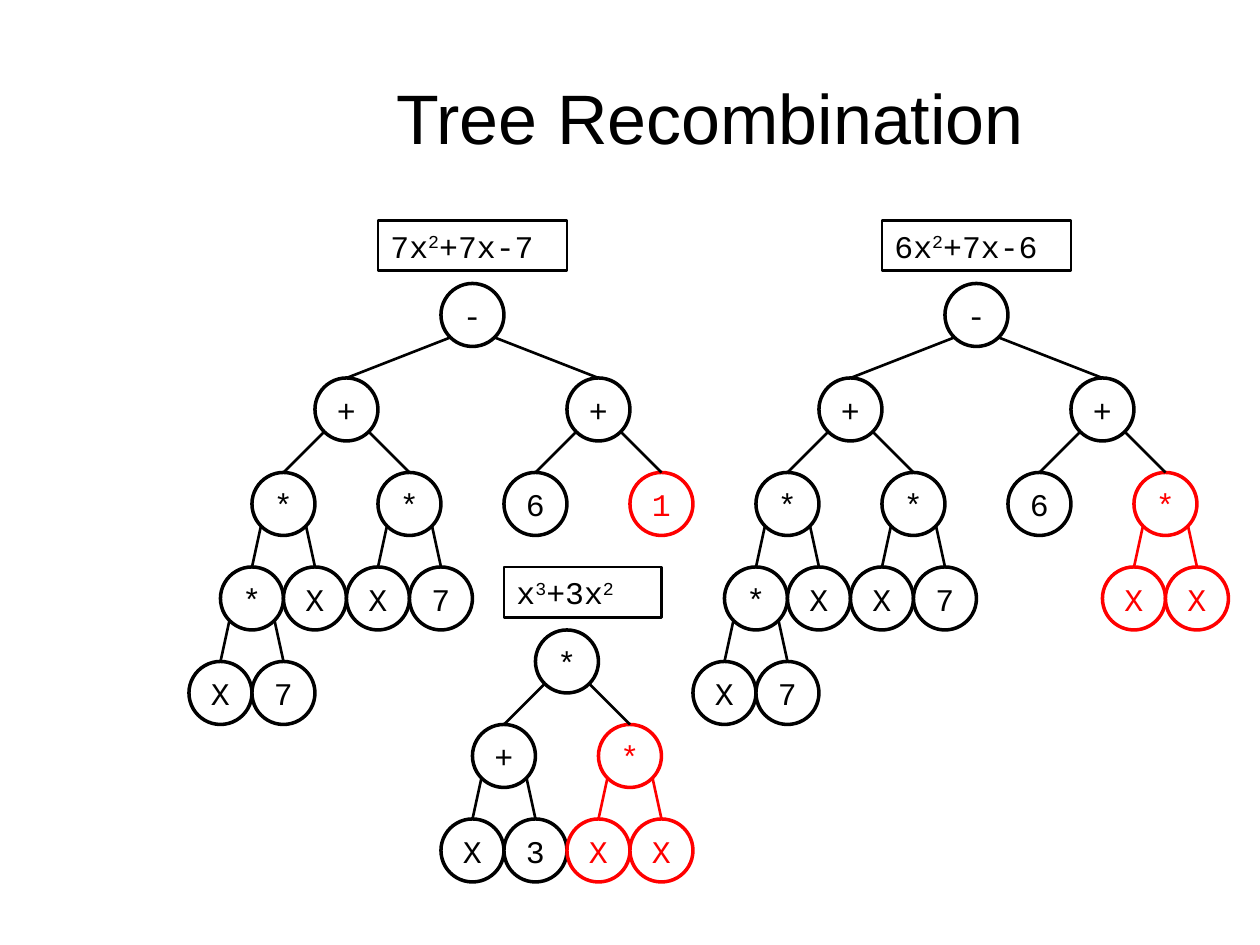
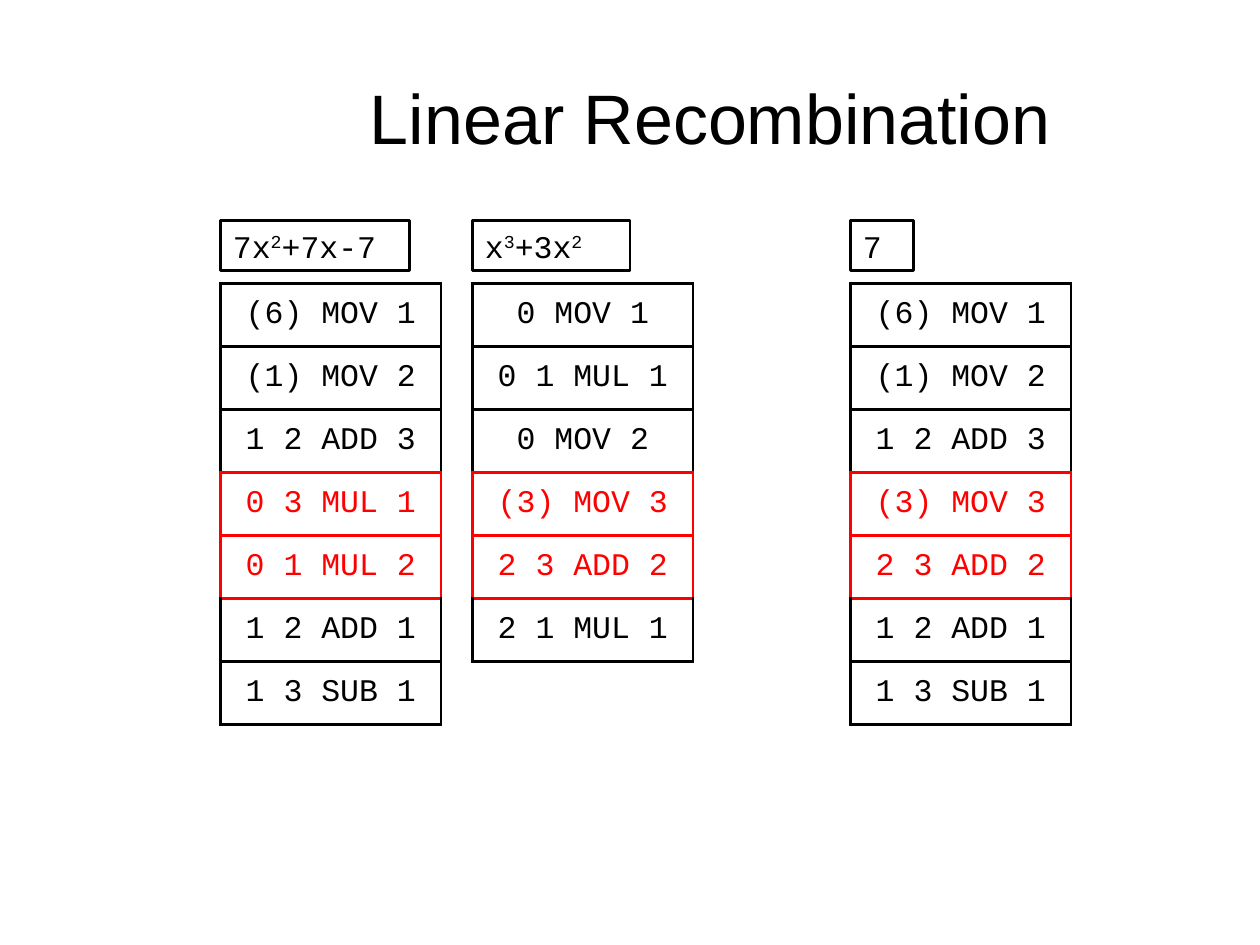
"""Build two slides on recombination of expression trees and linear programs."""
from lxml import etree
from pptx import Presentation
from pptx.dml.color import RGBColor
from pptx.enum.shapes import MSO_CONNECTOR, MSO_SHAPE
from pptx.enum.text import MSO_ANCHOR, MSO_AUTO_SIZE, PP_ALIGN
from pptx.oxml.ns import qn
from pptx.util import Pt

PX = 9144
CENTER = PP_ALIGN.CENTER
MIDDLE = MSO_ANCHOR.MIDDLE
STRAIGHT = MSO_CONNECTOR.STRAIGHT
OVAL = MSO_SHAPE.OVAL
GROW = MSO_AUTO_SIZE.SHAPE_TO_FIT_TEXT
COLOURS = {name: RGBColor.from_string(value) for name, value in
           {"ink": "000000", "swap": "FF0000", "paper": "FFFFFF"}.items()}
TITLE_FONT, CODE_FONT = "Arial", "Courier New"
LABEL_TOP, LABEL_HEIGHT = 175, 40
NODE, LEVEL_STEP, EDGE_OFFSET = 50, 75, 18
COLUMN_WIDTH, ROW_HEIGHT, TABLE_TOP = 175, 50, 225

SEVEN = ["7x", "2", "+7x-7"]
SIX = ["6x", "2", "+7x-6"]
CUBIC = ["x", "3", "+3x", "2"]


def format_runs(paragraph, colour="ink", font=CODE_FONT, size=18):
    for run in paragraph.runs:
        run.font.name = font
        run.font.size = Pt(size)
        run.font.color.rgb = COLOURS[colour]


def add_label(slide, parts, left, top, width):
    """Add a framed formula in which every second part is an exponent."""
    label = slide.shapes.add_textbox(left * PX, top * PX, width * PX, LABEL_HEIGHT * PX)
    label.line.color.rgb = COLOURS["ink"]
    label.line.width = Pt(1.5)
    label.text_frame.word_wrap = True
    label.text_frame.auto_size = GROW
    paragraph = label.text_frame.paragraphs[0]
    for index, part in enumerate(parts):
        run = paragraph.add_run()
        run.text = part
        if index % 2:
            run.font._element.set("baseline", "30000")
    format_runs(paragraph)


presentation = Presentation()
presentation.slide_width, presentation.slide_height = 1000 * PX, 750 * PX
slides = []
for heading in ("Tree Recombination", "Linear Recombination"):
    slide = presentation.slides.add_slide(presentation.slide_layouts[5])
    title = slide.shapes.title
    title.left, title.top, title.width, title.height = 177 * PX, 30 * PX, 773 * PX, 125 * PX
    title.text_frame.text = heading
    title.text_frame.vertical_anchor = MIDDLE
    title.text_frame.paragraphs[0].alignment = CENTER
    format_runs(title.text_frame.paragraphs[0], font=TITLE_FONT, size=40)
    slides.append(slide)
tree_slide, linear_slide = slides

# Each node: symbol, offset from the root, level, index of its parent, colour.
quadratic = [
    ("-", 0, 0, None, "ink"),
    ("+", -100, 1, 0, "ink"), ("+", 100, 1, 0, "ink"),
    ("*", -150, 2, 1, "ink"), ("*", -50, 2, 1, "ink"), ("6", 50, 2, 2, "ink"),
    ("*", -175, 3, 3, "ink"), ("X", -125, 3, 3, "ink"),
    ("X", -75, 3, 4, "ink"), ("7", -25, 3, 4, "ink"),
    ("X", -200, 4, 6, "ink"), ("7", -150, 4, 6, "ink"),
]
replaced_leaf = [("1", 150, 2, 2, "swap")]
inserted_subtree = [("*", 150, 2, 2, "swap"),
                    ("X", 125, 3, 12, "swap"), ("X", 175, 3, 12, "swap")]
cubic = [
    ("*", 0, 0, None, "ink"),
    ("+", -50, 1, 0, "ink"), ("*", 50, 1, 0, "swap"),
    ("X", -75, 2, 1, "ink"), ("3", -25, 2, 1, "ink"),
    ("X", 25, 2, 2, "swap"), ("X", 75, 2, 2, "swap"),
]
trees = [
    (375, 225, quadratic + replaced_leaf, SEVEN, 300, 175, 150),
    (775, 225, quadratic + inserted_subtree, SIX, 700, 175, 150),
    (450, 500, cubic, CUBIC, 400, 450, 125),
]
for root_x, root_top, nodes, formula, label_left, label_top, label_width in trees:
    add_label(tree_slide, formula, label_left, label_top, label_width)
    for symbol, offset, level, parent, colour in nodes:
        center_x, top = root_x + offset, root_top + level * LEVEL_STEP
        node = tree_slide.shapes.add_shape(
            OVAL, (center_x - NODE // 2) * PX, top * PX, NODE * PX, NODE * PX)
        node.shadow.inherit = False
        node.fill.solid()
        node.fill.fore_color.rgb = COLOURS["paper"]
        node.line.color.rgb = COLOURS[colour]
        node.line.width = Pt(2)
        frame = node.text_frame
        frame.text = symbol
        frame.word_wrap = False
        frame.vertical_anchor = MIDDLE
        frame.paragraphs[0].alignment = CENTER
        format_runs(frame.paragraphs[0], colour)
        if parent is None:
            continue
        parent_offset, parent_level, parent_colour = (nodes[parent][i] for i in (1, 2, 4))
        side = EDGE_OFFSET if offset > parent_offset else -EDGE_OFFSET
        start_x = root_x + parent_offset + side
        start_y = root_top + parent_level * LEVEL_STEP + NODE // 2 + EDGE_OFFSET
        edge = tree_slide.shapes.add_connector(
            STRAIGHT, start_x * PX, start_y * PX, center_x * PX, top * PX)
        edge.end_connect(node, 0)
        edge.line.color.rgb = COLOURS[parent_colour]
        edge.line.width = Pt(1.5)
        etree.SubElement(edge._element.spPr, qn("a:effectLst"))

head = ["(6) MOV 1", "(1) MOV 2", "1 2 ADD 3"]
tail = ["1 2 ADD 1", "1 3 SUB 1"]
exchanged = ["(3) MOV 3", "2 3 ADD 2"]
swapped_rows = (3, 4)
programs = [
    (175, 150, SEVEN, head + ["0 3 MUL 1", "0 1 MUL 2"] + tail),
    (375, 125, CUBIC, ["0 MOV 1", "0 1 MUL 1", "0 MOV 2"] + exchanged + ["2 1 MUL 1"]),
    (675, 50, ["7"], head + exchanged + tail),
]
for left, label_width, formula, instructions in programs:
    add_label(linear_slide, formula, left, LABEL_TOP, label_width)
    table = linear_slide.shapes.add_table(
        len(instructions), 1, left * PX, TABLE_TOP * PX,
        COLUMN_WIDTH * PX, len(instructions) * ROW_HEIGHT * PX).table
    table.first_row = table.horz_banding = False
    for row, instruction in enumerate(instructions):
        cell = table.cell(row, 0)
        cell.text_frame.text = instruction
        cell.vertical_anchor = MIDDLE
        cell.fill.background()
        paragraph = cell.text_frame.paragraphs[0]
        paragraph.alignment = CENTER
        format_runs(paragraph, "swap" if row in swapped_rows else "ink")
        properties = cell._tc.get_or_add_tcPr()
        neighbours = {"L": row, "R": row, "T": row - 1, "B": row + 1}
        for position, (side, neighbour) in enumerate(neighbours.items()):
            colour = "swap" if row in swapped_rows or neighbour in swapped_rows else "ink"
            border = etree.Element(qn(f"a:ln{side}"), w=str(Pt(1.5)))
            fill = etree.SubElement(border, qn("a:solidFill"))
            etree.SubElement(fill, qn("a:srgbClr"), val=str(COLOURS[colour]))
            properties.insert(position, border)

presentation.save("out.pptx")
